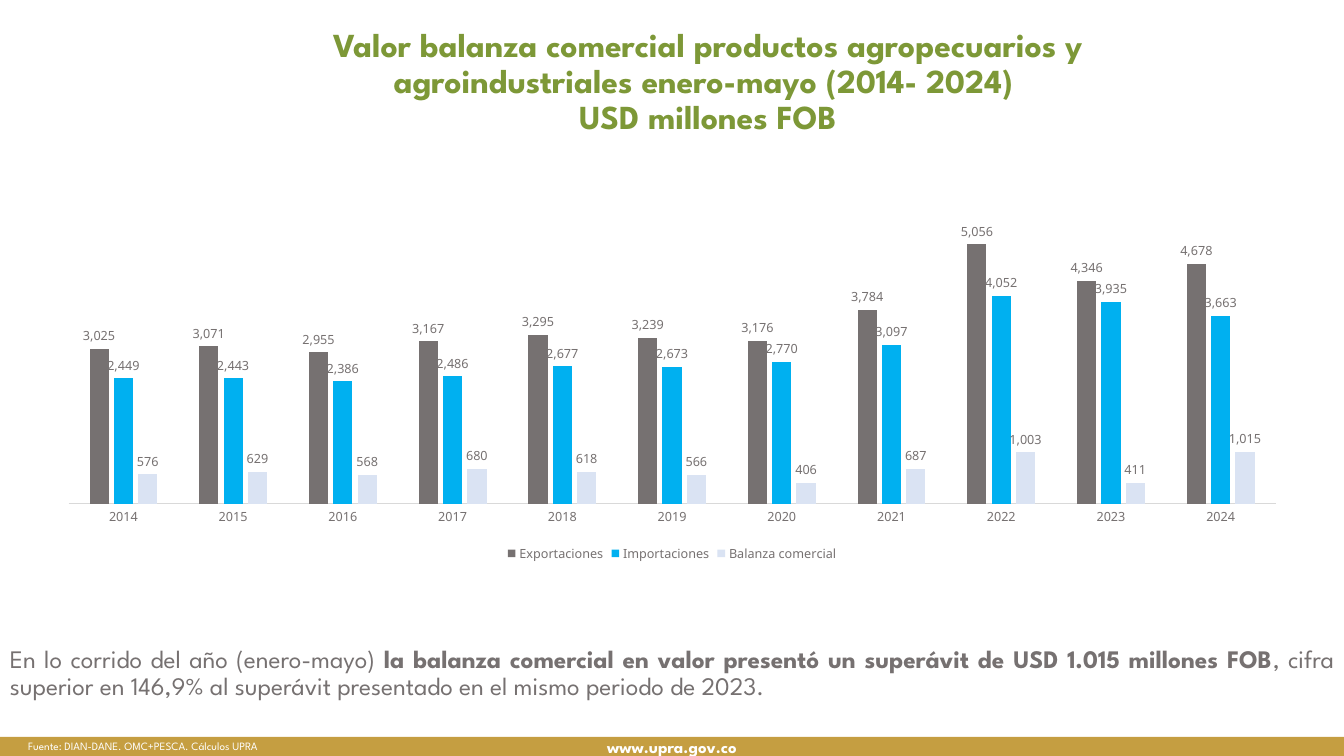
from dataclasses import dataclass

import lxml.etree
import pptx
import pptx.chart.chart
import pptx.chart.data
import pptx.dml.color
import pptx.dml.fill
import pptx.enum.chart
import pptx.enum.shapes
import pptx.enum.text
import pptx.slide
import pptx.text.text
import pptx.util

SLIDE_WIDTH = pptx.util.Inches(13.33)
SLIDE_HEIGHT = pptx.util.Inches(7.5)
HEADING_FONT = "League Spartan"
CHART_FONT = "Noto Sans"
GREY = "767171"
WHITE = "FFFFFF"
NUMBER_FORMAT = '_-* #,##0_-;\\-* #,##0_-;_-* "-"??_-;_-@_'
ALIGN = pptx.enum.text.PP_ALIGN
ANCHOR = pptx.enum.text.MSO_ANCHOR


@dataclass(frozen=True)
class Area:
    left: float
    top: float
    width: float
    height: float

    def lengths(self) -> tuple[int, int, int, int]:
        return (
            round(self.left / 100 * SLIDE_WIDTH),
            round(self.top / 100 * SLIDE_HEIGHT),
            round(self.width / 100 * SLIDE_WIDTH),
            round(self.height / 100 * SLIDE_HEIGHT),
        )


@dataclass(frozen=True)
class Span:
    text: str
    bold: bool = False


@dataclass(frozen=True)
class TextBlock:
    area: Area
    lines: list[list[Span]]
    size: float
    color: str
    align: pptx.enum.text.PP_ALIGN
    spacing: float = 1.0
    fill: str | None = None
    anchor: pptx.enum.text.MSO_ANCHOR = ANCHOR.TOP


@dataclass(frozen=True)
class Series:
    name: str
    color: str
    values: list[int]


BLOCKS = [
    TextBlock(
        Area(0, 97.47, 100, 2.53), [[Span("www.upra.gov.co", True)]],
        12, WHITE, ALIGN.CENTER, fill="C59E41", anchor=ANCHOR.MIDDLE,
    ),
    TextBlock(
        Area(1.35, 97.2, 96.85, 3.2),
        [[Span("Fuente: DIAN-DANE. OMC+PESCA. Cálculos UPRA")]],
        8, WHITE, ALIGN.JUSTIFY,
    ),
    TextBlock(
        Area(0, 84.93, 100, 12.4),
        [[
            Span("En lo corrido del año (enero-mayo) "),
            Span("la balanza comercial en valor presentó un superávit de USD 1.015 millones FOB", True),
            Span(", cifra superior en 146,9% al superávit presentado en el mismo periodo de 2023."),
        ]],
        18, GREY, ALIGN.JUSTIFY, spacing=0.9,
    ),
    TextBlock(
        Area(18.3, 3.07, 68.72, 14.27),
        [
            [Span("Valor balanza comercial productos agropecuarios y agroindustriales enero-mayo (2014- 2024) ", True)],
            [Span("USD millones FOB", True)],
        ],
        24, "7D9837", ALIGN.CENTER, spacing=0.9,
    ),
]

CHART_AREA = Area(3.23, 24.93, 93.55, 50)
YEARS = [str(year) for year in range(2014, 2025)]
SERIES = [
    Series("Exportaciones", GREY,
           [3025, 3071, 2955, 3167, 3295, 3239, 3176, 3784, 5056, 4346, 4678]),
    Series("Importaciones", "00B0F0",
           [2449, 2443, 2386, 2486, 2677, 2673, 2770, 3097, 4052, 3935, 3663]),
    Series("Balanza comercial", "DAE3F3",
           [576, 629, 568, 680, 618, 566, 406, 687, 1003, 411, 1015]),
]


def rgb(color: str) -> pptx.dml.color.RGBColor:
    return pptx.dml.color.RGBColor.from_string(color)


def paint(fill: pptx.dml.fill.FillFormat, color: str) -> None:
    fill.solid()
    fill.fore_color.rgb = rgb(color)


def style_font(font: pptx.text.text.Font, name: str, size: float, color: str) -> None:
    font.name = name
    font.size = pptx.util.Pt(size)
    font.color.rgb = rgb(color)


def draw_text(page: pptx.slide.Slide, block: TextBlock) -> None:
    if block.fill:
        box = page.shapes.add_shape(
            pptx.enum.shapes.MSO_SHAPE.RECTANGLE, *block.area.lengths())
        box.shadow.inherit = False
        paint(box.fill, block.fill)
        box.line.fill.background()
    else:
        box = page.shapes.add_textbox(*block.area.lengths())
    frame = box.text_frame
    frame.word_wrap = True
    frame.vertical_anchor = block.anchor
    para = frame.paragraphs[0]
    para.alignment = block.align
    para.line_spacing = block.spacing
    style_font(para.font, HEADING_FONT, block.size, block.color)
    spans = [span for line in block.lines for span in line]
    uniform = len({span.bold for span in spans}) == 1
    if uniform:
        para.font.bold = spans[0].bold
    for index, line in enumerate(block.lines):
        if index:
            para.add_line_break()
        for span in line:
            run = para.add_run()
            run.text = span.text
            if not uniform:
                run.font.bold = span.bold


def draw_chart(page: pptx.slide.Slide) -> None:
    data = pptx.chart.data.CategoryChartData(number_format=NUMBER_FORMAT)
    data.categories = YEARS
    for series in SERIES:
        data.add_series(series.name, series.values)
    chart = page.shapes.add_chart(
        pptx.enum.chart.XL_CHART_TYPE.COLUMN_CLUSTERED, *CHART_AREA.lengths(), data).chart
    chart.has_title = False
    style_font(chart.font, CHART_FONT, 10, "395F9B")
    chart.has_legend = True
    chart.legend.position = pptx.enum.chart.XL_LEGEND_POSITION.BOTTOM
    chart.legend.include_in_layout = False
    style_font(chart.legend.font, CHART_FONT, 9, GREY)
    style_axes(chart)
    plot = chart.plots[0]
    plot.gap_width = 219
    plot.overlap = -27
    plot.vary_by_categories = False
    for series, columns in zip(SERIES, plot.series):
        paint(columns.format.fill, series.color)
        labels = columns.data_labels
        labels.show_value = True
        labels.position = pptx.enum.chart.XL_LABEL_POSITION.OUTSIDE_END
        labels.number_format = NUMBER_FORMAT
        labels.number_format_is_linked = False
        style_font(labels.font, CHART_FONT, 9, GREY)


def style_axes(chart: pptx.chart.chart.Chart) -> None:
    years = chart.category_axis
    years.major_tick_mark = pptx.enum.chart.XL_TICK_MARK.NONE
    years.format.line.color.rgb = rgb("D9D9D9")
    years.format.line.width = pptx.util.Pt(0.75)
    style_font(years.tick_labels.font, CHART_FONT, 9, GREY)
    amounts = chart.value_axis
    amounts.visible = False
    amounts.has_major_gridlines = False
    amounts.minimum_scale = 0
    amounts.maximum_scale = 6000


def main() -> None:
    deck = pptx.Presentation()
    deck.slide_width = SLIDE_WIDTH
    deck.slide_height = SLIDE_HEIGHT
    page = deck.slides.add_slide(deck.slide_layouts[6])
    for block in BLOCKS:
        draw_text(page, block)
    draw_chart(page)
    deck.save("out.pptx")


if __name__ == "__main__":
    main()
